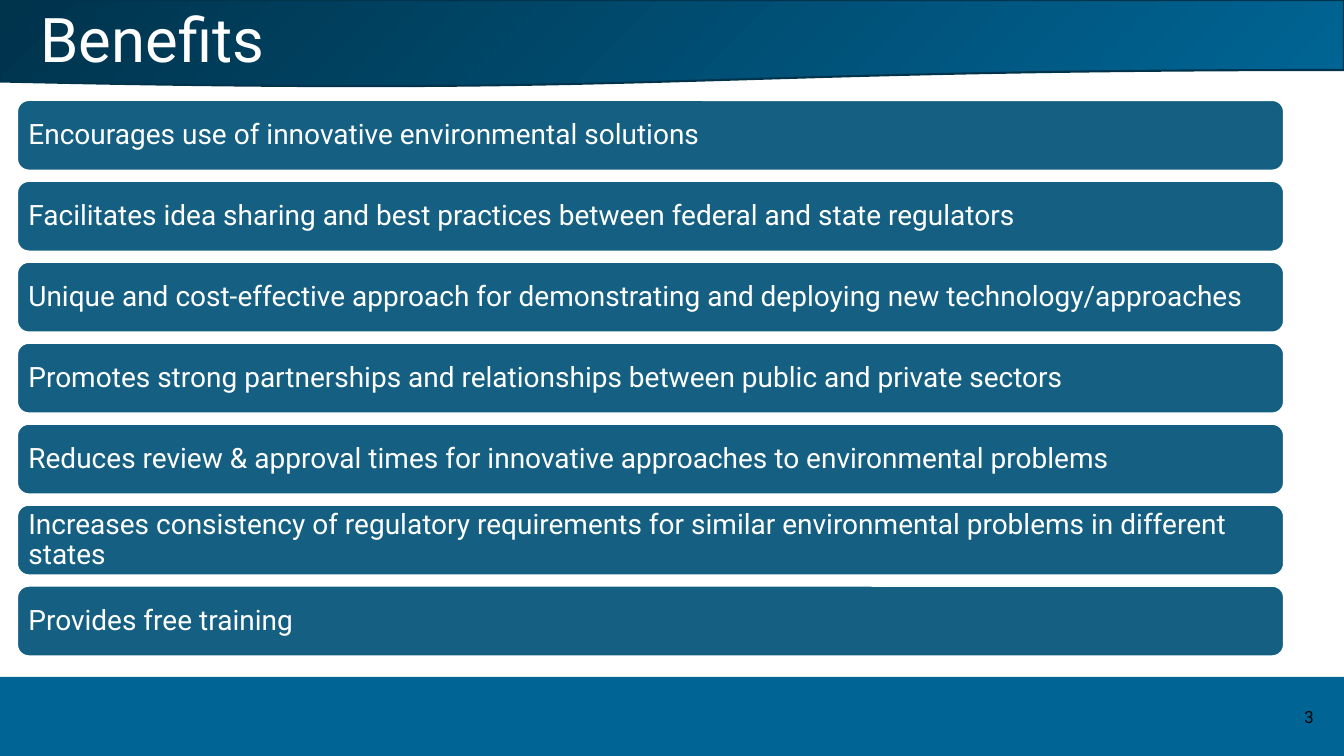
from dataclasses import dataclass

from pptx import Presentation
from pptx import util as u
from pptx.dml.color import RGBColor
from pptx.enum import shapes, text


@dataclass(frozen=True)
class Theme:
    font: str = "Roboto"
    navy: RGBColor = RGBColor.from_string("00334C")
    blue: RGBColor = RGBColor.from_string("006595")
    teal: RGBColor = RGBColor.from_string("156082")
    white: RGBColor = RGBColor.from_string("FFFFFF")
    black: RGBColor = RGBColor.from_string("000000")
    title_size: int = 44
    benefit_size: int = 20
    number_size: int = 12
    outline: float = 1.5


class SlideBuilder:
    def __init__(self, presentation, theme):
        self.theme = theme
        self.slide = presentation.slides.add_slide(presentation.slide_layouts[5])

    def set_text(self, shape, wording, size, color, align, inset=(0.25, 0.13), spacing=0.9):
        frame = shape.text_frame
        frame.word_wrap = True
        frame.auto_size = text.MSO_AUTO_SIZE.NONE
        frame.vertical_anchor = text.MSO_ANCHOR.MIDDLE
        frame.margin_left = frame.margin_right = u.Cm(inset[0])
        frame.margin_top = frame.margin_bottom = u.Cm(inset[1])
        frame.text = wording
        paragraph = frame.paragraphs[0]
        paragraph.alignment = align
        paragraph.line_spacing = spacing
        paragraph.font.name = self.theme.font
        paragraph.font.size = u.Pt(size)
        paragraph.font.color.rgb = color

    def block(self, kind, box, fill=None, line=None):
        shape = self.slide.shapes.add_shape(kind, *map(u.Cm, box))
        shape.shadow.inherit = False
        if fill is not None:
            shape.fill.solid()
            shape.fill.fore_color.rgb = fill
        if line is None:
            shape.line.fill.background()
        else:
            shape.line.color.rgb = line
            shape.line.width = u.Pt(self.theme.outline)
        return shape

    def header(self, box):
        wave = self.block(shapes.MSO_SHAPE.FLOWCHART_DOCUMENT, box, line=self.theme.navy)
        wave.fill.gradient()
        wave.fill.gradient_angle = 315
        for stop, color, position in zip(
            wave.fill.gradient_stops, (self.theme.navy, self.theme.blue), (0, 1)
        ):
            stop.color.rgb = color
            stop.position = position

    def footer(self, box):
        self.block(shapes.MSO_SHAPE.RECTANGLE, box, self.theme.blue)

    def title(self, wording, box):
        title = self.slide.shapes.title
        title.left, title.top, title.width, title.height = map(u.Cm, box)
        self.slide.shapes.element.append(title.element)
        self.set_text(title, wording, self.theme.title_size, self.theme.white,
                      text.PP_ALIGN.LEFT)

    def number(self, wording, box):
        label = self.slide.shapes.add_textbox(*map(u.Cm, box))
        self.set_text(label, wording, self.theme.number_size, self.theme.black,
                      text.PP_ALIGN.CENTER, spacing=1)

    def benefit(self, wording, box):
        bar = self.block(shapes.MSO_SHAPE.ROUNDED_RECTANGLE, box,
                         self.theme.teal, self.theme.white)
        self.set_text(bar, wording, self.theme.benefit_size, self.theme.white,
                      text.PP_ALIGN.LEFT, inset=(0.2, 0.2))


BENEFITS = (
    "Encourages use of innovative environmental solutions",
    "Facilitates idea sharing and best practices between federal and state regulators",
    "Unique and cost-effective approach for demonstrating and deploying new technology/approaches",
    "Promotes strong partnerships and relationships between public and private sectors",
    "Reduces review & approval times for innovative approaches to environmental problems",
    "Increases consistency of regulatory requirements for similar environmental problems "
    "in different states",
    "Provides free training",
)
FIRST_BAR_TOP = 2.52
BAR_PITCH = 2.04


def main():
    presentation = Presentation()
    presentation.slide_width = u.Cm(33.87)
    presentation.slide_height = u.Cm(19.05)
    builder = SlideBuilder(presentation, Theme())
    builder.header((0, 0, 33.87, 2.2))
    builder.footer((0, 17.06, 33.87, 1.99))
    builder.number("3", (32.33, 17.5, 1.32, 1.12))
    builder.title("Benefits", (0.77, 0.1, 32.5, 1.95))
    for index, wording in enumerate(BENEFITS):
        builder.benefit(wording, (0.43, FIRST_BAR_TOP + index * BAR_PITCH, 31.93, 1.78))
    presentation.save("out.pptx")


if __name__ == "__main__":
    main()
